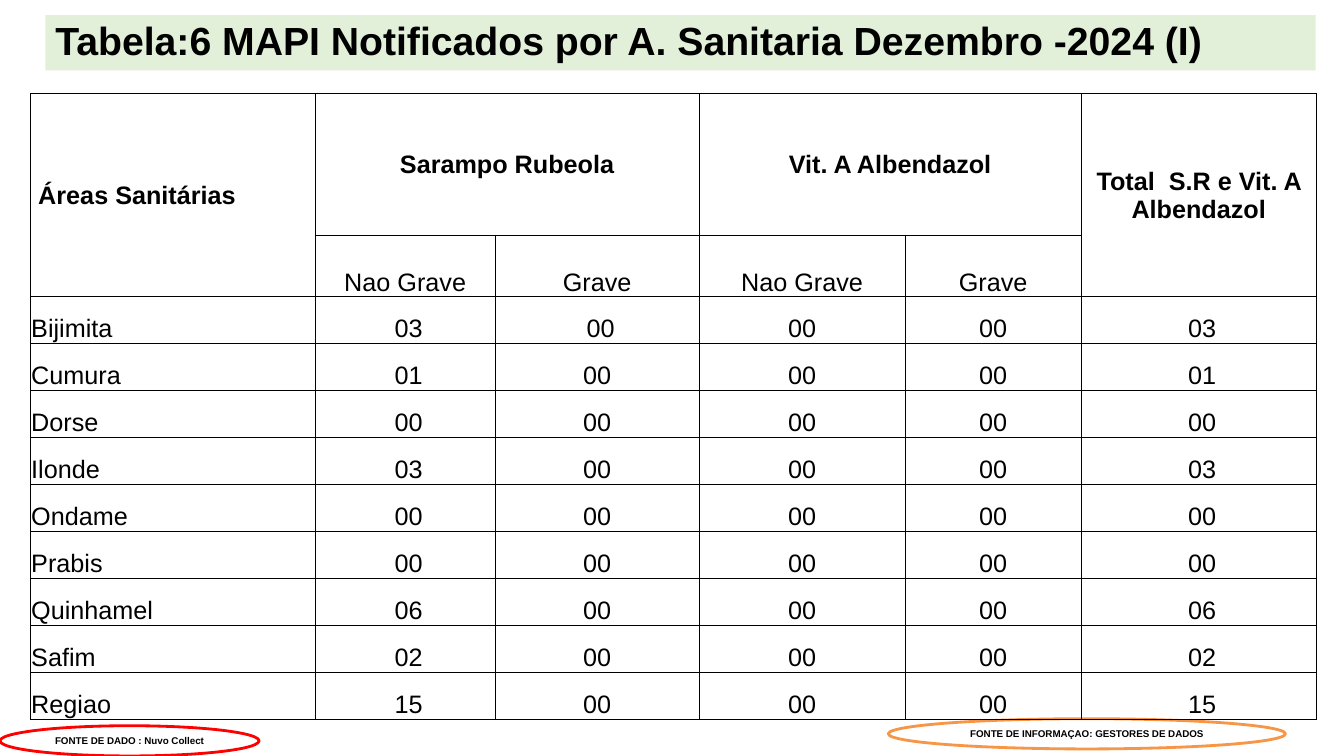
"""Builds the slide with the December 2024 table of MAPI notified by health area."""
from lxml.etree import SubElement
from pptx import Presentation
from pptx.dml.color import RGBColor
from pptx.enum.shapes import MSO_SHAPE
from pptx.enum.text import MSO_ANCHOR, PP_ALIGN
from pptx.oxml.ns import qn
from pptx.util import Inches, Pt

BLACK = RGBColor(0x00, 0x00, 0x00)
WHITE = RGBColor(0xFF, 0xFF, 0xFF)
PALE_GREEN = RGBColor(0xE2, 0xF0, 0xD9)
RED = RGBColor(0xFF, 0x00, 0x00)
ORANGE = RGBColor(0xF7, 0x96, 0x46)

COLUMN_WIDTHS = [21.2, 13.4, 15.17, 15.33, 13.1, 17.5]
AREAS = ["Bijimita", "Cumura", "Dorse", "Ilonde", "Ondame",
         "Prabis", "Quinhamel", "Safim", "Regiao"]
NON_SEVERE_MEASLES = ["03", "01", "00", "03", "00", "00", "06", "02", "15"]
ROW_HEIGHTS = [18.67, 7.65] + [6.21] * len(AREAS)
HEADINGS = [
    (0, 0, 1, 0, " Áreas Sanitárias"),
    (0, 1, 0, 2, "Sarampo Rubeola"),
    (0, 3, 0, 4, "Vit. A Albendazol"),
    (0, 5, 1, 5, "Total  S.R e Vit. A Albendazol"),
]


class ReportSlide:
    """Draws styled elements on a slide divided into 100 columns and 100 rows."""

    def __init__(self, deck, font="Arial"):
        self.column = deck.slide_width / 100
        self.row = deck.slide_height / 100
        self.font = font
        self.shapes = deck.slides.add_slide(deck.slide_layouts[6]).shapes

    def place(self, left, top, width, height):
        return (round(left * self.column), round(top * self.row),
                round(width * self.column), round(height * self.row))

    def set_text(self, frame, text, size, bold=True, align=PP_ALIGN.CENTER):
        frame.word_wrap = True
        paragraph = frame.paragraphs[0]
        paragraph.text = text
        paragraph.alignment = align
        font = paragraph.font
        font.name, font.size, font.bold = self.font, Pt(size), bold
        font.color.rgb = BLACK
        return paragraph

    def title(self, text, *area):
        banner = self.shapes.add_textbox(*self.place(*area))
        banner.fill.solid()
        banner.fill.fore_color.rgb = PALE_GREEN
        banner.text_frame.vertical_anchor = MSO_ANCHOR.MIDDLE
        heading = self.set_text(banner.text_frame, text, 28, align=PP_ALIGN.LEFT)
        heading.line_spacing = 0.9

    def source_note(self, text, outline, fill, *area):
        note = self.shapes.add_shape(MSO_SHAPE.OVAL, *self.place(*area))
        note.shadow.inherit = False
        if fill is None:
            note.fill.background()
        else:
            note.fill.solid()
            note.fill.fore_color.rgb = fill
        note.line.color.rgb = outline
        note.line.width = Pt(2)
        note.text_frame.vertical_anchor = MSO_ANCHOR.MIDDLE
        self.set_text(note.text_frame, text, 7)

    def table(self, left, top, widths, heights):
        area = self.place(left, top, sum(widths), sum(heights))
        grid = self.shapes.add_table(len(heights), len(widths), *area).table
        grid.first_row = grid.horz_banding = False
        for column, width in zip(grid.columns, widths):
            column.width = round(width * self.column)
        for row, height in zip(grid.rows, heights):
            row.height = round(height * self.row)
        for cell in grid.iter_cells():
            cell.fill.background()
            cell.margin_left = cell.margin_top = cell.margin_right = Inches(0.01)
            cell.margin_bottom = 0
            self.border(cell)
        return grid

    def border(self, cell):
        properties = cell._tc.get_or_add_tcPr()
        for position, side in enumerate(("a:lnL", "a:lnR", "a:lnT", "a:lnB")):
            edge = SubElement(properties, qn(side), w=str(Pt(0.5)))
            ink = SubElement(edge, qn("a:solidFill"))
            SubElement(ink, qn("a:srgbClr"), val=str(BLACK))
            properties.insert(position, edge)

    def fill_cell(self, cell, text, bold=False, align=PP_ALIGN.CENTER):
        cell.vertical_anchor = MSO_ANCHOR.MIDDLE if bold else MSO_ANCHOR.BOTTOM
        self.set_text(cell.text_frame, text, 18, bold, align)


def main():
    deck = Presentation()
    deck.slide_width, deck.slide_height = Inches(13.33), Inches(7.5)
    report = ReportSlide(deck)

    report.title("Tabela:6 MAPI Notificados por A. Sanitaria Dezembro -2024 (I)",
                 3.38, 2, 94.52, 7.33)
    report.source_note("FONTE DE DADO : Nuvo Collect", RED, None,
                       0, 96, 19.28, 4)
    report.source_note("FONTE DE INFORMAÇAO: GESTORES DE DADOS", ORANGE, WHITE,
                       66.09, 95.07, 29.56, 4)

    cases = report.table(2.25, 12.4, COLUMN_WIDTHS, ROW_HEIGHTS)
    for top, left, bottom, right, heading in HEADINGS:
        cases.cell(top, left).merge(cases.cell(bottom, right))
        align = PP_ALIGN.CENTER if left else PP_ALIGN.LEFT
        report.fill_cell(cases.cell(top, left), heading, True, align)
    for column, severity in enumerate(["Nao Grave", "Grave"] * 2, start=1):
        report.fill_cell(cases.cell(1, column), severity)
    for row, (area, count) in enumerate(zip(AREAS, NON_SEVERE_MEASLES), start=2):
        report.fill_cell(cases.cell(row, 0), area, align=PP_ALIGN.LEFT)
        severe = " 00" if area == "Bijimita" else "00"
        values = [f" {count}", severe, "00", "00", f" {count}"]
        for column, value in enumerate(values, start=1):
            report.fill_cell(cases.cell(row, column), value)

    deck.save("out.pptx")


if __name__ == "__main__":
    main()
